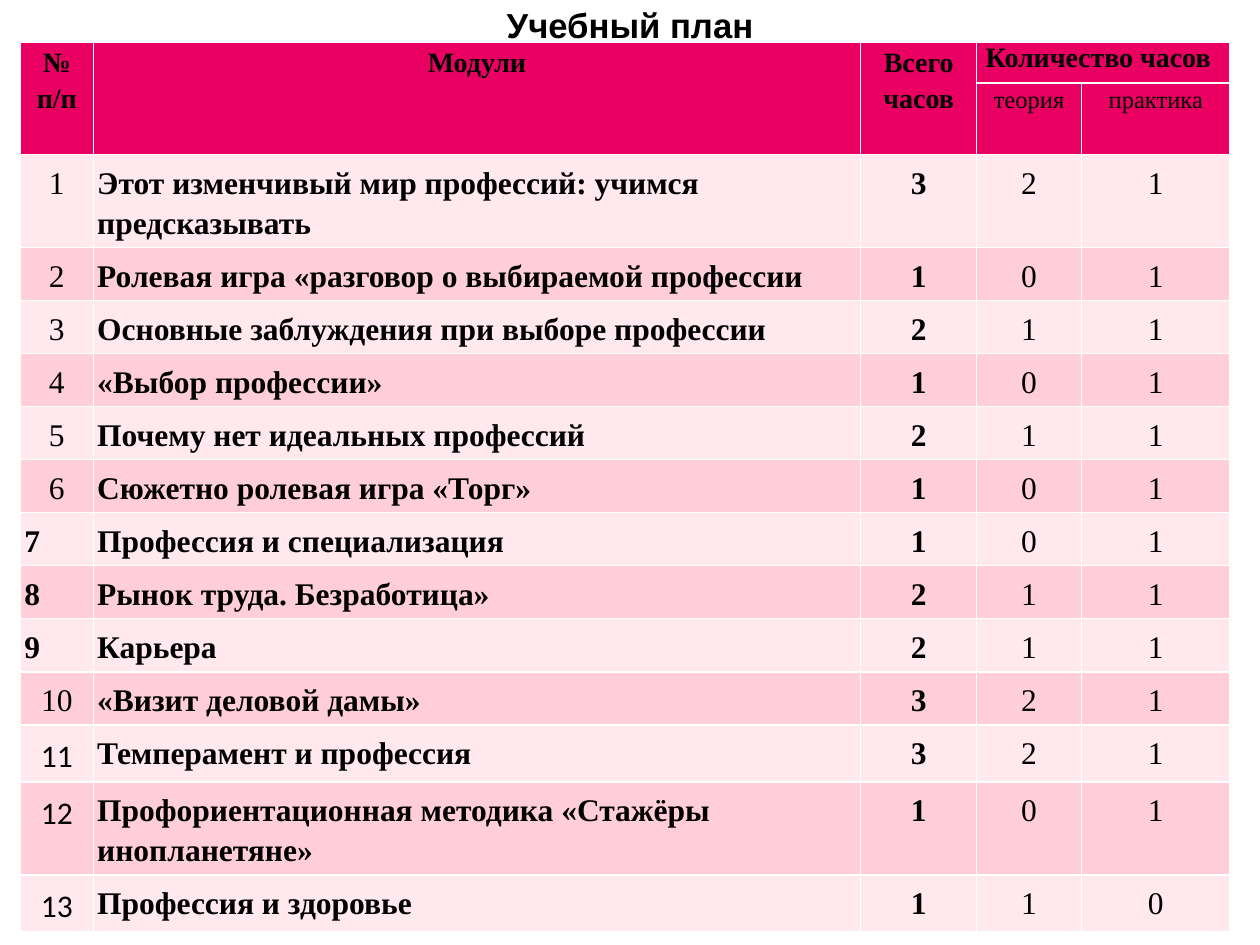
from dataclasses import dataclass
from typing import Optional

from pptx import Presentation
from pptx.dml.color import RGBColor
from pptx.enum.text import MSO_ANCHOR, MSO_AUTO_SIZE, PP_ALIGN
from pptx.util import Cm, Pt

LEFT, CENTER, JUSTIFY = PP_ALIGN.LEFT, PP_ALIGN.CENTER, PP_ALIGN.JUSTIFY
MIDDLE = MSO_ANCHOR.MIDDLE
NO_AUTOFIT = MSO_AUTO_SIZE.NONE


@dataclass(frozen=True)
class Theme:
    ink: RGBColor = RGBColor(0x00, 0x00, 0x00)
    header: RGBColor = RGBColor(0xE9, 0x00, 0x62)
    bands: tuple = (RGBColor(0xFF, 0xE8, 0xEE), RGBColor(0xFF, 0xCE, 0xDA))
    title_font: str = "Arial"
    table_font: str = "Times New Roman"
    number_font: str = "Calibri"
    title_size: float = 19.8
    header_size: float = 16
    subheader_size: float = 14
    body_size: float = 18


THEME = Theme()


@dataclass(frozen=True)
class TextStyle:
    size: float
    bold: bool = False
    align: PP_ALIGN = CENTER
    font: str = THEME.table_font
    spacing: Optional[float] = 1.15


@dataclass(frozen=True)
class Heading:
    text: str
    start: tuple
    end: tuple
    style: TextStyle


@dataclass(frozen=True)
class Module:
    name: str
    total: int
    theory: int
    practice: int
    name_align: PP_ALIGN = LEFT


TITLE = TextStyle(THEME.title_size, bold=True, font=THEME.title_font, spacing=None)
HEADER = TextStyle(THEME.header_size, bold=True)
HOURS_HEADER = TextStyle(THEME.header_size, bold=True, align=LEFT, spacing=None)
SUBHEADER = TextStyle(THEME.subheader_size)
PLAIN = TextStyle(THEME.body_size)
STRONG = TextStyle(THEME.body_size, bold=True)
STRONG_NUMBER = TextStyle(THEME.body_size, bold=True, align=JUSTIFY)
CALIBRI_NUMBER = TextStyle(THEME.body_size, font=THEME.number_font)

COLUMN_WIDTHS = (1.47, 15.47, 2.34, 2.11, 3.0)
ROW_HEIGHT = 0.81
HEADER_ROWS = 2
HEADER_MARGINS = (0.18, 0)
BODY_MARGINS = (0.08, 0.13)

HEADINGS = (
    Heading("№ п/п", (0, 0), (1, 0), HEADER),
    Heading("Модули", (0, 1), (1, 1), HEADER),
    Heading("Всего часов", (0, 2), (1, 2), HEADER),
    Heading("Количество часов", (0, 3), (0, 4), HOURS_HEADER),
    Heading("теория", (1, 3), (1, 3), SUBHEADER),
    Heading("практика", (1, 4), (1, 4), SUBHEADER),
)

MODULES = (
    Module("Этот изменчивый мир профессий: учимся предсказывать", 3, 2, 1),
    Module("Ролевая игра «разговор о выбираемой профессии", 1, 0, 1, JUSTIFY),
    Module("Основные заблуждения при выборе профессии", 2, 1, 1),
    Module("«Выбор профессии»", 1, 0, 1),
    Module("Почему нет идеальных профессий", 2, 1, 1),
    Module("Сюжетно ролевая игра «Торг»", 1, 0, 1),
    Module("Профессия и специализация", 1, 0, 1, JUSTIFY),
    Module("Рынок труда. Безработица»", 2, 1, 1),
    Module("Карьера", 2, 1, 1),
    Module("«Визит деловой дамы»", 3, 2, 1),
    Module("Темперамент и профессия", 3, 2, 1),
    Module("Профориентационная методика «Стажёры инопланетяне»", 1, 0, 1),
    Module("Профессия и здоровье", 1, 1, 0),
)


def apply(target, values: dict) -> None:
    """Set every named attribute on the target."""
    for name, value in values.items():
        setattr(target, name, value)


def write(frame, text: str, style: TextStyle) -> None:
    """Put one styled paragraph into a text frame."""
    paragraph = frame.paragraphs[0]
    apply(paragraph, {"alignment": style.align, "line_spacing": style.spacing})
    run = paragraph.add_run()
    run.text = text
    apply(run.font, {"name": style.font, "size": Pt(style.size), "bold": style.bold})
    run.font.color.rgb = THEME.ink


def paint(cell, colour: RGBColor, margins: tuple) -> None:
    """Give a cell its fill and its side and vertical margins."""
    side, vertical = map(Cm, margins)
    apply(cell, {"margin_left": side, "margin_right": side,
                 "margin_top": vertical, "margin_bottom": vertical})
    cell.fill.solid()
    cell.fill.fore_color.rgb = colour


def number_style(number: int) -> TextStyle:
    """Choose the style of a module number."""
    if number > 10:
        return CALIBRI_NUMBER
    return STRONG_NUMBER if 7 <= number <= 9 else PLAIN


def draw_title(title) -> None:
    """Place and write the slide title."""
    apply(title, {"left": Cm(1.27), "top": Cm(0), "width": Cm(22.86), "height": Cm(0.99)})
    apply(title.text_frame, {"word_wrap": True, "auto_size": NO_AUTOFIT,
                             "vertical_anchor": MIDDLE,
                             "margin_top": Cm(0), "margin_bottom": Cm(0)})
    write(title.text_frame, "Учебный план", TITLE)


def draw_headings(table) -> None:
    """Fill the two header rows and merge their spanning cells."""
    for row in range(HEADER_ROWS):
        for column in range(len(COLUMN_WIDTHS)):
            paint(table.cell(row, column), THEME.header, HEADER_MARGINS)
    for heading in HEADINGS:
        cell = table.cell(*heading.start)
        if heading.start != heading.end:
            cell.merge(table.cell(*heading.end))
        write(cell.text_frame, heading.text, heading.style)


def draw_module(table, number: int, module: Module) -> None:
    """Fill one row with a module and its hours."""
    name_style = TextStyle(THEME.body_size, bold=True, align=module.name_align)
    entries = (
        (number, number_style(number)),
        (module.name, name_style),
        (module.total, STRONG),
        (module.theory, PLAIN),
        (module.practice, PLAIN),
    )
    band = THEME.bands[(number - 1) % len(THEME.bands)]
    for column, (value, style) in enumerate(entries):
        cell = table.cell(HEADER_ROWS + number - 1, column)
        paint(cell, band, BODY_MARGINS)
        write(cell.text_frame, str(value), style)


def main() -> None:
    """Build the curriculum slide."""
    deck = Presentation()
    apply(deck, {"slide_width": Cm(25.4), "slide_height": Cm(19.05)})
    slide = deck.slides.add_slide(deck.slide_layouts[5])
    draw_title(slide.shapes.title)

    row_count = HEADER_ROWS + len(MODULES)
    curriculum = slide.shapes.add_table(
        row_count, len(COLUMN_WIDTHS), Cm(0.41), Cm(0.86),
        Cm(sum(COLUMN_WIDTHS)), Cm(ROW_HEIGHT * row_count)).table
    for column, width in zip(curriculum.columns, COLUMN_WIDTHS):
        column.width = Cm(width)
    draw_headings(curriculum)
    for number, module in enumerate(MODULES, start=1):
        draw_module(curriculum, number, module)
    deck.save("out.pptx")


if __name__ == "__main__":
    main()
